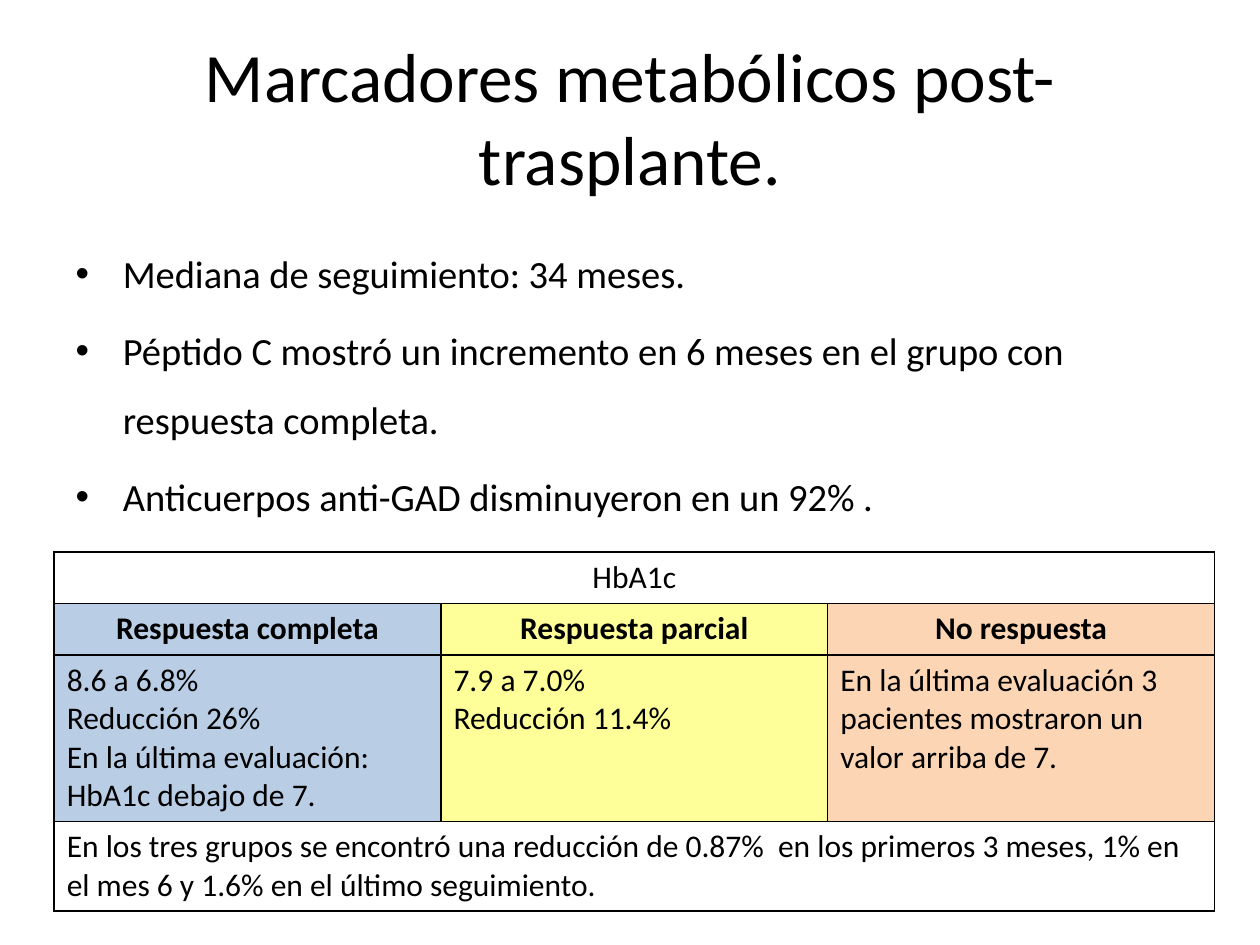
import pptx
import pptx.dml.color
import pptx.enum.text
import pptx.oxml
import pptx.oxml.ns
import pptx.util

BLACK = pptx.dml.color.RGBColor(0x00, 0x00, 0x00)
BLUE = pptx.dml.color.RGBColor(0xB9, 0xCD, 0xE5)
YELLOW = pptx.dml.color.RGBColor(0xFF, 0xFF, 0x99)
ORANGE = pptx.dml.color.RGBColor(0xFC, 0xD5, 0xB5)
LEFT = pptx.enum.text.PP_ALIGN.LEFT
CENTER = pptx.enum.text.PP_ALIGN.CENTER

BULLETS = [
    "Mediana de seguimiento: 34 meses.",
    "Péptido C mostró un incremento en 6 meses en el grupo con respuesta completa.",
    "Anticuerpos anti-GAD disminuyeron en un 92% .",
]
GROUPS = [
    ("Respuesta completa", BLUE,
     "8.6 a 6.8%\nReducción 26%\nEn la última evaluación:\nHbA1c debajo de 7."),
    ("Respuesta parcial", YELLOW, "7.9 a 7.0%\nReducción 11.4%"),
    ("No respuesta", ORANGE,
     "En la última evaluación 3 pacientes mostraron un valor arriba de 7."),
]
SUMMARY = ("En los tres grupos se encontró una reducción de 0.87%  en los primeros "
           "3 meses, 1% en el mes 6 y 1.6% en el último seguimiento.")
ROW_HEIGHTS = [0.41, 0.41, 1.32, 0.71]


class SlideBuilder:
    """Holds the text style and the current slide, measured in shares of its size."""

    font = "Calibri"

    def __init__(self, presentation):
        self.width = presentation.slide_width
        self.height = presentation.slide_height
        self.slide = presentation.slides.add_slide(presentation.slide_layouts[1])

    def box(self, left, top, width, height):
        return (round(left * self.width), round(top * self.height),
                round(width * self.width), round(height * self.height))

    def set_text(self, text_frame, text, size, alignment=LEFT, bold=False):
        text_frame.text = text
        for paragraph in text_frame.paragraphs:
            paragraph.alignment = alignment
            for run in paragraph.runs:
                run.font.name = self.font
                run.font.size = pptx.util.Pt(size)
                run.font.bold = bold
                run.font.color.rgb = BLACK

    def place(self, shape, box, text, size, alignment=LEFT):
        shape.left, shape.top, shape.width, shape.height = self.box(*box)
        self.set_text(shape.text_frame, text, size, alignment)
        shape.text_frame.auto_size = pptx.enum.text.MSO_AUTO_SIZE.NONE

    def title(self, text, box):
        self.place(self.slide.shapes.title, box, text, 39.6, CENTER)

    def bullets(self, items, box):
        shape = self.slide.placeholders[1]
        self.place(shape, box, "\n".join(items), 22)
        for paragraph in shape.text_frame.paragraphs:
            paragraph.line_spacing = 1.5

    def table(self, row_heights, column_count, box):
        frame = self.slide.shapes.add_table(len(row_heights), column_count, *self.box(*box))
        table = frame.table
        table.first_row = table.horz_banding = False
        for row, height in zip(table.rows, row_heights):
            row.height = pptx.util.Inches(height)
        for cell in table.iter_cells():
            cell.fill.background()
            self.borders(cell)
        return table

    def borders(self, cell):
        properties = cell._tc.get_or_add_tcPr()
        for position, side in enumerate(("lnL", "lnR", "lnT", "lnB")):
            properties.insert(position, pptx.oxml.parse_xml(
                f'<a:{side} {pptx.oxml.ns.nsdecls("a")} w="{pptx.util.Pt(1)}">'
                f'<a:solidFill><a:srgbClr val="{BLACK}"/></a:solidFill></a:{side}>'))

    def cell(self, cell, text, alignment=LEFT, bold=False, color=None):
        self.set_text(cell.text_frame, text, 18, alignment, bold)
        if color is not None:
            cell.fill.solid()
            cell.fill.fore_color.rgb = color

    def wide_cell(self, table, row, text, alignment=LEFT):
        first = table.cell(row, 0)
        first.merge(table.cell(row, len(table.columns) - 1))
        self.cell(first, text, alignment)


def main():
    presentation = pptx.Presentation()
    presentation.slide_width = pptx.util.Inches(10)
    presentation.slide_height = pptx.util.Inches(7.5)
    builder = SlideBuilder(presentation)
    builder.title("Marcadores metabólicos post-trasplante.", (0.05, 0.04, 0.9, 1 / 6))
    builder.bullets(BULLETS, (0.05, 0.7 / 3, 0.9, 0.66))
    table = builder.table(ROW_HEIGHTS, len(GROUPS), (0.043, 0.584, 0.921, 0.38))
    builder.wide_cell(table, 0, "HbA1c", CENTER)
    for column, (name, color, result) in enumerate(GROUPS):
        builder.cell(table.cell(1, column), name, CENTER, True, color)
        builder.cell(table.cell(2, column), result, color=color)
    builder.wide_cell(table, 3, SUMMARY)
    presentation.save("out.pptx")


if __name__ == "__main__":
    main()
